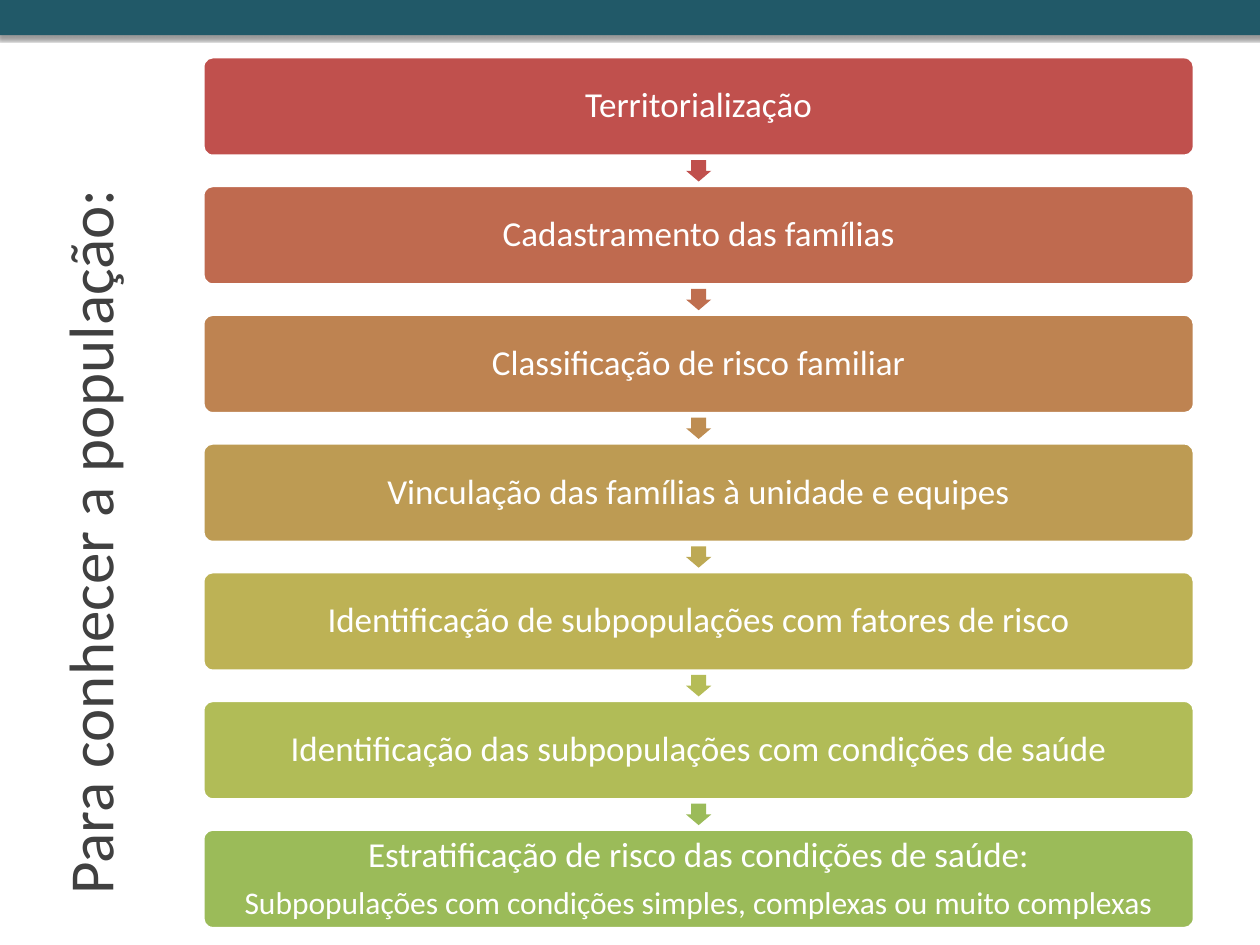
from lxml import etree
from pptx import Presentation
from pptx.dml.color import RGBColor
from pptx.enum.shapes import MSO_SHAPE as Shape
from pptx.enum.text import MSO_ANCHOR as Anchor, PP_ALIGN as Align
from pptx.oxml.ns import qn
from pptx.util import Inches, Pt

FONT = "Calibri"
STEPS = [
    (["Territorialização"], "C0504D"),
    (["Cadastramento das famílias"], "BF6A4F"),
    (["Classificação de risco familiar"], "BE8351"),
    (["Vinculação das famílias à unidade e equipes"], "BD9B53"),
    (["Identificação de subpopulações com fatores de risco"], "BDB255"),
    (["Identificação das subpopulações com condições de saúde"], "B1BC57"),
    (["Estratificação de risco das condições de saúde:",
      "Subpopulações com condições simples, complexas ou muito complexas"], "9BBB59"),
]
ARROW_COLORS = ["C0504D", "BF6F4F", "BE8D52", "BDA954", "B5BC57", "9BBB59"]


def color(value):
    return RGBColor.from_string(value)


def add_filled(slide, kind, left, top, width, height, fill):
    shape = slide.shapes.add_shape(
        kind, Inches(left), Inches(top), Inches(width), Inches(height))
    shape.shadow.inherit = False
    shape.fill.solid()
    shape.fill.fore_color.rgb = color(fill)
    shape.line.fill.background()
    return shape


def format_paragraph(paragraph, size, value):
    for run in paragraph.runs:
        run.font.name = FONT
        run.font.size = Pt(size)
        run.font.color.rgb = color(value)


def add_header(slide, left, top, width, height):
    band = add_filled(slide, Shape.RECTANGLE, left, top, width, height, "215968")
    effects = band._element.spPr.find(qn("a:effectLst"))
    shadow = etree.SubElement(
        effects, qn("a:outerShdw"), blurRad=str(Pt(2)), dist=str(Pt(2)),
        dir="5400000", rotWithShape="0")
    shade = etree.SubElement(shadow, qn("a:srgbClr"), val="000000")
    etree.SubElement(shade, qn("a:alpha"), val="40000")


def add_title(slide, left, top, width, height):
    title = slide.shapes.add_textbox(
        Inches(left), Inches(top), Inches(width), Inches(height))
    title.rotation = 270
    frame = title.text_frame
    frame.word_wrap = True
    frame.text = "Para conhecer a população:"
    paragraph = frame.paragraphs[0]
    paragraph._p.get_or_add_pPr().set("marL", str(Inches(0.2)))
    format_paragraph(paragraph, 36, "404040")


def add_step(slide, left, top, width, height, lines, fill):
    box = add_filled(slide, Shape.ROUNDED_RECTANGLE, left, top, width, height, fill)
    box.adjustments[0] = 0.1
    box.line.color.rgb = color("FFFFFF")
    box.line.width = Pt(2)
    frame = box.text_frame
    frame.word_wrap = True
    frame.vertical_anchor = Anchor.MIDDLE
    frame.margin_left = frame.margin_right = Inches(0.1)
    frame.margin_top = frame.margin_bottom = Inches(0.1)
    frame.text = "\n".join(lines)
    for paragraph, size in zip(frame.paragraphs, (20, 18)):
        paragraph.alignment = Align.CENTER
        paragraph.line_spacing = 0.9
        paragraph.space_after = Pt(0.35 * size)
        format_paragraph(paragraph, size, "FFFFFF")


def add_arrow(slide, center_x, center_y, fill):
    length, breadth = 0.17, 0.2
    arrow = add_filled(slide, Shape.RIGHT_ARROW, center_x - length / 2,
                       center_y - breadth / 2, length, breadth, fill)
    arrow.rotation = 90
    arrow.adjustments[0] = 0.6
    arrow.adjustments[1] = 0.5


def add_process(slide, left, top, width, height):
    box_height = 0.79
    pitch = (height - box_height) / (len(STEPS) - 1)
    for index, (lines, fill) in enumerate(STEPS):
        add_step(slide, left, top + index * pitch, width, box_height, lines, fill)
    for index, fill in enumerate(ARROW_COLORS):
        gap_center = top + index * pitch + (box_height + pitch) / 2
        add_arrow(slide, left + width / 2, gap_center, fill)


def main():
    presentation = Presentation()
    presentation.slide_width = Inches(10)
    presentation.slide_height = Inches(7.5)
    slide = presentation.slides.add_slide(presentation.slide_layouts[6])
    add_header(slide, -0.02, 0, 10.04, 0.28)
    add_title(slide, -2.47, 3.49, 6.73, 1.09)
    add_process(slide, 1.61, 0.45, 7.87, 6.92)
    presentation.save("out.pptx")


if __name__ == "__main__":
    main()
